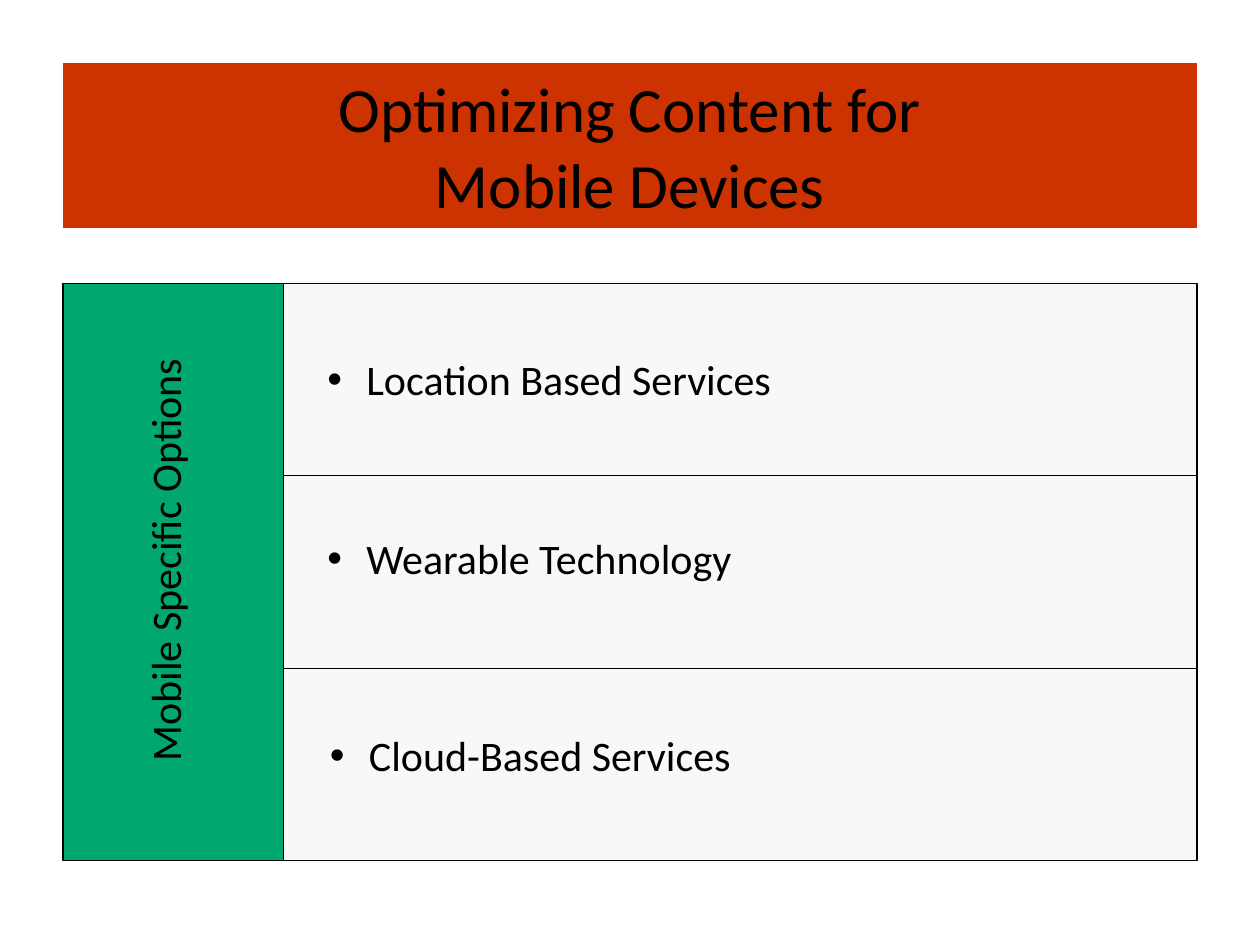
from lxml import etree
from pptx import Presentation
from pptx.dml.color import RGBColor
from pptx.enum import shapes, text
from pptx.oxml.ns import qn
from pptx.util import Inches, Pt

RED = RGBColor(0xCC, 0x33, 0x00)
GREEN = RGBColor(0x00, 0xA8, 0x6D)
PALE = RGBColor(0xF8, 0xF8, 0xF8)
BLACK = RGBColor(0x00, 0x00, 0x00)
FONT = "Calibri"


def add_run(p, words, size):
    r = p.add_run()
    r.text = words
    r.font.name = FONT
    r.font.size = Pt(size)
    r.font.color.rgb = BLACK


def add_panel(slide, x, y, w, h, fill):
    sp = slide.shapes.add_shape(
        shapes.MSO_SHAPE.RECTANGLE, Inches(x), Inches(y), Inches(w), Inches(h))
    sp.shadow.inherit = False
    sp.fill.solid()
    sp.fill.fore_color.rgb = fill
    sp.line.color.rgb = BLACK
    sp.line.width = Pt(0.75)


def add_text_box(slide, x, y, w, h):
    tf = slide.shapes.add_textbox(
        Inches(x), Inches(y), Inches(w), Inches(h)).text_frame
    tf.word_wrap = True
    return tf


def add_title(slide, x, y, w, h, lines):
    sp = slide.shapes.title
    sp.left, sp.top, sp.width, sp.height = (Inches(v) for v in (x, y, w, h))
    sp.fill.solid()
    sp.fill.fore_color.rgb = RED
    tf = sp.text_frame
    tf.vertical_anchor = text.MSO_ANCHOR.MIDDLE
    for i, line in enumerate(lines):
        p = tf.add_paragraph() if i else tf.paragraphs[0]
        p.alignment = text.PP_ALIGN.CENTER
        p.space_before = Pt(0)
        add_run(p, line, 36)


def add_side_label(slide, x, y, w, h, words):
    add_panel(slide, x, y, w, h, GREEN)
    # Label reads from bottom to top
    tf = add_text_box(slide, x + 0.6, y + 0.4, 0.57, 3.59)
    tf._txBody.bodyPr.set("vert", "vert270")
    p = tf.paragraphs[0]
    p.alignment = text.PP_ALIGN.CENTER
    p.line_spacing = 0.9
    add_run(p, words, 24)


def add_option_rows(slide, x, y, w, h, options):
    row_h = h / len(options)
    for i, (words, dx, dy) in enumerate(options):
        top = y + i * row_h
        add_panel(slide, x, top, w, row_h, PALE)
        # Bulleted option
        p = add_text_box(slide, x + dx, top + dy, 6, 0.5).paragraphs[0]
        p.space_after = Pt(10)
        pPr = p._p.get_or_add_pPr()
        pPr.set("marL", str(Inches(0.31)))
        pPr.set("indent", str(Inches(-0.31)))
        etree.SubElement(pPr, qn("a:buFont")).set("typeface", "Arial")
        etree.SubElement(pPr, qn("a:buChar")).set("char", "•")
        add_run(p, words, 24)


def main():
    prs = Presentation()
    prs.slide_width, prs.slide_height = Inches(10), Inches(7.5)
    slide = prs.slides.add_slide(prs.slide_layouts[5])

    add_title(slide, 0.5, 0.5, 9, 1.31,
              ["Optimizing Content for", "Mobile Devices"])
    add_side_label(slide, 0.5, 2.25, 1.75, 4.58, "Mobile Specific Options")
    # Each option: wording, then its offset within the row
    add_option_rows(slide, 2.25, 2.25, 7.25, 4.58, [
        ("Location Based Services", 0.25, 0.51),
        ("Wearable Technology", 0.25, 0.4),
        ("Cloud-Based Services", 0.27, 0.44),
    ])
    prs.save("out.pptx")


if __name__ == "__main__":
    main()
